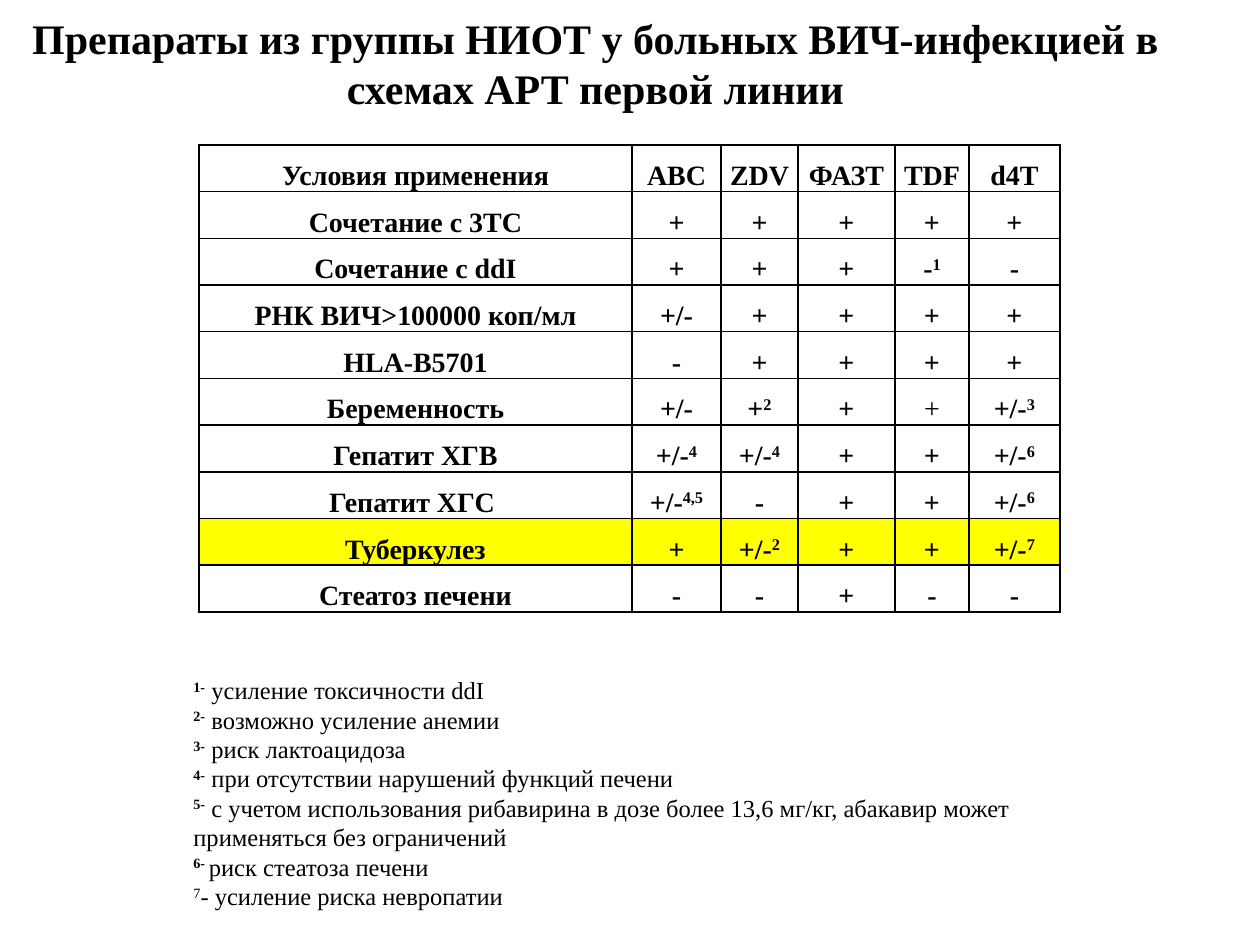
from lxml import etree
from pptx import Presentation
from pptx.dml.color import RGBColor
from pptx.enum.text import MSO_ANCHOR, PP_ALIGN
from pptx.oxml.ns import qn
from pptx.util import Pt

PX = 914400 // 126
FONT = "Times New Roman"
BLACK, YELLOW = "000000", "FFFF00"
CENTER, LEFT = PP_ALIGN.CENTER, PP_ALIGN.LEFT
TOP, MIDDLE = MSO_ANCHOR.TOP, MSO_ANCHOR.MIDDLE

TITLE = "Препараты из группы НИОТ у больных ВИЧ-инфекцией в схемах АРТ первой линии"
COL_WIDTHS = [433, 89, 77, 97, 74, 91]
ROW_HEIGHT = 46
HIGHLIGHTED_ROW = "Туберкулез"
LIGHT_CELL = ("Беременность", 4)
ROWS = [
    ["Условия применения", "ABC", "ZDV", "ФАЗТ", "TDF", "d4T"],
    ["Сочетание с 3TC", "+", "+", "+", "+", "+"],
    ["Сочетание с ddI", "+", "+", "+", "-^1", "-"],
    ["РНК ВИЧ>100000 коп/мл", "+/-", "+", "+", "+", "+"],
    ["HLA-B5701", "-", "+", "+", "+", "+"],
    ["Беременность", "+/-", "+^2", "+", "+", "+/-^3"],
    ["Гепатит ХГВ", "+/-^4", "+/-^4", "+", "+", "+/-^6"],
    ["Гепатит ХГС ", "+/-^4,5", "-", "+", "+", "+/-^6"],
    ["Туберкулез", "+", "+/-^2", "+", "+", "+/-^7"],
    ["Стеатоз печени", "-", "-", "+", "-", "-"],
]
NOTES = [
    ("1-", " усиление токсичности ddI", True),
    ("2-", " возможно усиление анемии", True),
    ("3-", " риск лактоацидоза", True),
    ("4-", " при отсутствии нарушений функций печени", True),
    ("5-", " с учетом использования рибавирина в дозе более 13,6 мг/кг, "
           "абакавир может применяться без ограничений", True),
    ("6- ", "риск стеатоза печени", True),
    ("7", "- усиление риска невропатии", False),
]


def px(*values):
    """Turn pixel lengths into EMU."""
    return [v * PX for v in values]


def rgb(value):
    """Turn a hex string into a colour."""
    return RGBColor.from_string(value)


def add_run(p, text, size=16, bold=False, color=BLACK, superscript=False):
    """Append a formatted run to a paragraph."""
    r = p.add_run()
    r.text = text
    r.font.name, r.font.size, r.font.bold = FONT, Pt(size), bold
    r.font.color.rgb = rgb(color)
    if superscript:
        r._r.get_or_add_rPr().set("baseline", "30000")


def set_borders(cell, color=BLACK, width=1):
    """Draw a solid line on all four sides of a cell."""
    tcPr = cell._tc.get_or_add_tcPr()
    for i, side in enumerate(("lnL", "lnR", "lnT", "lnB")):
        ln = etree.Element(qn(f"a:{side}"), w=str(Pt(width)))
        fill = etree.SubElement(ln, qn("a:solidFill"))
        etree.SubElement(fill, qn("a:srgbClr"), val=color)
        tcPr.insert(i, ln)


def fill_cell(cell, text, bold=True, fill=None):
    """Write a table cell, with the part after ^ as superscript."""
    cell.margin_left = cell.margin_right = 8 * PX
    cell.margin_top = cell.margin_bottom = 0
    cell.vertical_anchor = MIDDLE
    p = cell.text_frame.paragraphs[0]
    p.alignment, p.line_spacing = CENTER, 1.5
    base, _, mark = text.partition("^")
    add_run(p, base, bold=bold)
    if mark:
        add_run(p, mark, bold=bold, superscript=True)
    if fill:
        cell.fill.solid()
        cell.fill.fore_color.rgb = rgb(fill)
    else:
        cell.fill.background()
    set_borders(cell)


def add_title(s):
    """Place and format the slide title."""
    sp = s.shapes.title
    sp.left, sp.top, sp.width, sp.height = px(0, 6, 1191, 118)
    tf = sp.text_frame
    tf.word_wrap, tf.vertical_anchor = True, TOP
    p = tf.paragraphs[0]
    p.alignment = CENTER
    add_run(p, TITLE, size=24, bold=True)


def add_conditions_table(s):
    """Add the table of drugs by conditions of use."""
    box = px(199, 145, sum(COL_WIDTHS), ROW_HEIGHT * len(ROWS))
    table = s.shapes.add_table(len(ROWS), len(COL_WIDTHS), *box).table
    table.horz_banding = table.first_row = False
    for column, width in zip(table.columns, COL_WIDTHS):
        column.width = width * PX
    for i, row in enumerate(ROWS):
        table.rows[i].height = ROW_HEIGHT * PX
        fill = YELLOW if row[0] == HIGHLIGHTED_ROW else None
        for j, text in enumerate(row):
            bold = (row[0], j) != LIGHT_CELL
            fill_cell(table.cell(i, j), text, bold=bold, fill=fill)


def add_notes(s):
    """Add the numbered footnotes below the table."""
    tf = s.shapes.add_textbox(*px(181, 669, 925, 251)).text_frame
    tf.word_wrap = True
    for i, (mark, text, bold) in enumerate(NOTES):
        p = tf.add_paragraph() if i else tf.paragraphs[0]
        p.alignment = LEFT
        add_run(p, mark, size=14, bold=bold, superscript=True)
        add_run(p, text, size=14)


def main():
    """Build the slide and save it."""
    prs = Presentation()
    prs.slide_width, prs.slide_height = px(1260, 945)
    s = prs.slides.add_slide(prs.slide_layouts[5])
    add_title(s)
    add_conditions_table(s)
    add_notes(s)
    prs.save("out.pptx")


if __name__ == "__main__":
    main()
